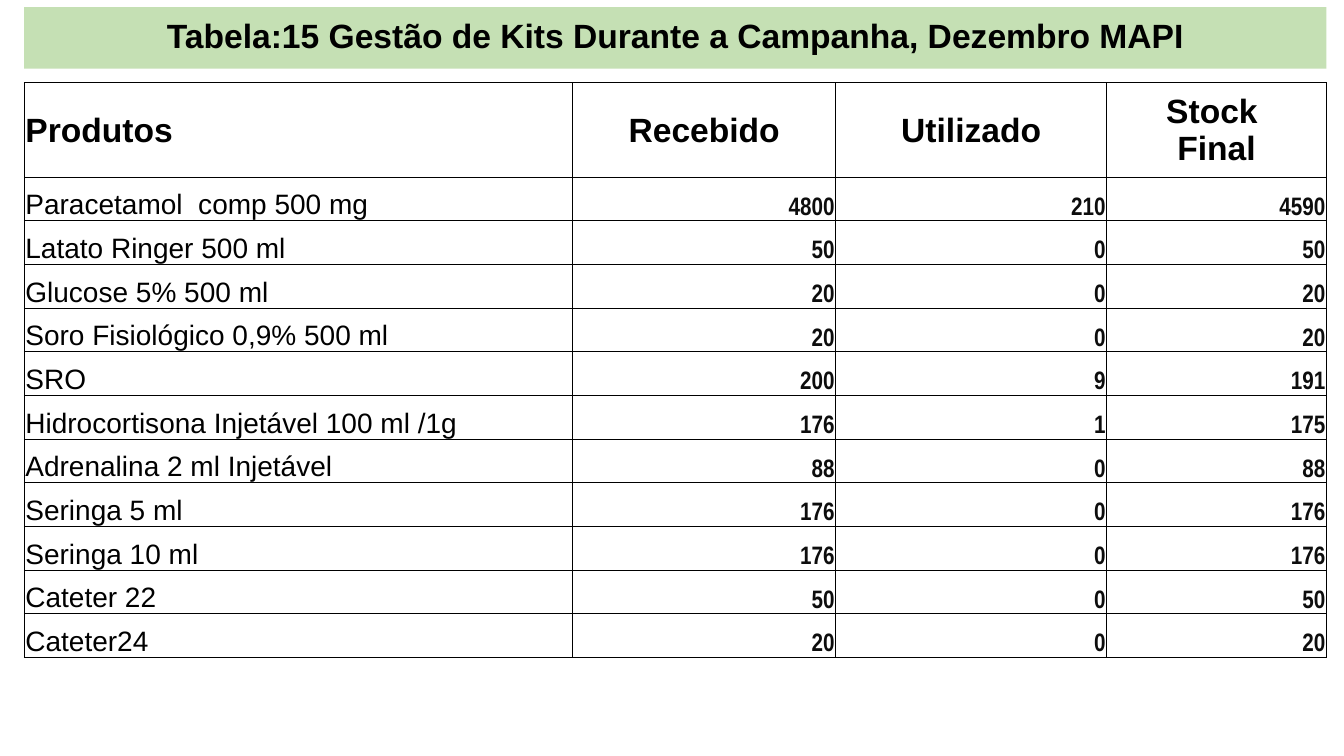
"""Build the slide with the table of kits managed during the December campaign."""
from lxml.etree import SubElement
from pptx import Presentation
from pptx.dml.color import RGBColor
from pptx.enum.shapes import MSO_SHAPE
from pptx.enum.text import MSO_ANCHOR, PP_ALIGN
from pptx.oxml.ns import qn
from pptx.util import Cm, Pt

BLACK = RGBColor(0x00, 0x00, 0x00)
NEAR_BLACK = RGBColor(0x0D, 0x0D, 0x0D)
WHITE = RGBColor(0xFF, 0xFF, 0xFF)
LIGHT_GREEN = RGBColor(0xC5, 0xE0, 0xB4)

HEADING_FONT = {"name": "Arial", "size": Pt(24), "bold": True}
PRODUCT_FONT = {"name": "Arial", "size": Pt(20), "bold": False}
NUMBER_FONT = {"name": "Arial Narrow", "size": Pt(18), "bold": True}
CELL_MARGINS = {"margin_left": Cm(0.03), "margin_top": Cm(0.03),
                "margin_right": Cm(0.03), "margin_bottom": Cm(0)}

LEFT, WIDTH = Cm(0.61), Cm(32.82)
COLUMN_WIDTHS = [13.82, 6.63, 6.83, 5.54]
HEADER_HEIGHT, ROW_HEIGHT = Cm(2.38), Cm(1.1)
HEADERS = ["Produtos", "Recebido", "Utilizado", "Stock \nFinal"]
PRODUCTS = [
    ("Paracetamol  comp 500 mg", 4800, 210),
    ("Latato Ringer 500 ml", 50, 0),
    ("Glucose 5% 500 ml", 20, 0),
    ("Soro Fisiológico 0,9% 500 ml", 20, 0),
    ("SRO", 200, 9),
    ("Hidrocortisona Injetável 100 ml /1g", 176, 1),
    ("Adrenalina 2 ml Injetável", 88, 0),
    ("Seringa 5 ml", 176, 0),
    ("Seringa 10 ml", 176, 0),
    ("Cateter 22", 50, 0),
    ("Cateter24", 20, 0),
]


def write_text(text_frame, text, font_values, color, alignment):
    text_frame.text = text
    for paragraph in text_frame.paragraphs:
        paragraph.alignment = alignment
        for run in paragraph.runs:
            for attribute, value in font_values.items():
                setattr(run.font, attribute, value)
            run.font.color.rgb = color


def add_borders(cell):
    properties = cell._tc.get_or_add_tcPr()
    for side in ("lnL", "lnR", "lnT", "lnB"):
        line = SubElement(properties, qn(f"a:{side}"), w=str(Pt(0.5)))
        fill = SubElement(line, qn("a:solidFill"))
        SubElement(fill, qn("a:srgbClr"), val=str(BLACK))


presentation = Presentation()
presentation.slide_width, presentation.slide_height = Cm(33.87), Cm(19.05)
slide = presentation.slides.add_slide(presentation.slide_layouts[6])

title = slide.shapes.add_shape(MSO_SHAPE.RECTANGLE, LEFT, Cm(0.18), WIDTH, Cm(1.55))
title.shadow.inherit = False
title.fill.solid()
title.fill.fore_color.rgb = LIGHT_GREEN
title.line.fill.background()
title.text_frame.word_wrap = True
title.text_frame.vertical_anchor = MSO_ANCHOR.MIDDLE
write_text(title.text_frame, "Tabela:15 Gestão de Kits Durante a Campanha, Dezembro MAPI",
           HEADING_FONT, BLACK, PP_ALIGN.CENTER)
title.text_frame.paragraphs[0].line_spacing = 0.9

rows = [HEADERS]
for product, received, used in PRODUCTS:
    rows.append([product, str(received), str(used), str(received - used)])

table = slide.shapes.add_table(len(rows), len(HEADERS), LEFT, Cm(2.08), WIDTH,
                               HEADER_HEIGHT + ROW_HEIGHT * len(PRODUCTS)).table
table.first_row = False
table.horz_banding = False
for column, width in zip(table.columns, COLUMN_WIDTHS):
    column.width = Cm(width)

for row_index, texts in enumerate(rows):
    is_header = row_index == 0
    table.rows[row_index].height = HEADER_HEIGHT if is_header else ROW_HEIGHT
    for column_index, text in enumerate(texts):
        cell = table.cell(row_index, column_index)
        add_borders(cell)
        cell.fill.solid()
        cell.fill.fore_color.rgb = WHITE
        for attribute, value in CELL_MARGINS.items():
            setattr(cell, attribute, value)
        cell.vertical_anchor = MSO_ANCHOR.MIDDLE if is_header else MSO_ANCHOR.BOTTOM
        if is_header:
            font_values, color, alignment = HEADING_FONT, BLACK, PP_ALIGN.CENTER
        else:
            font_values, color, alignment = NUMBER_FONT, NEAR_BLACK, PP_ALIGN.RIGHT
        if column_index == 0:
            font_values = HEADING_FONT if is_header else PRODUCT_FONT
            color, alignment = BLACK, PP_ALIGN.LEFT
        write_text(cell.text_frame, text, font_values, color, alignment)

presentation.save("out.pptx")
